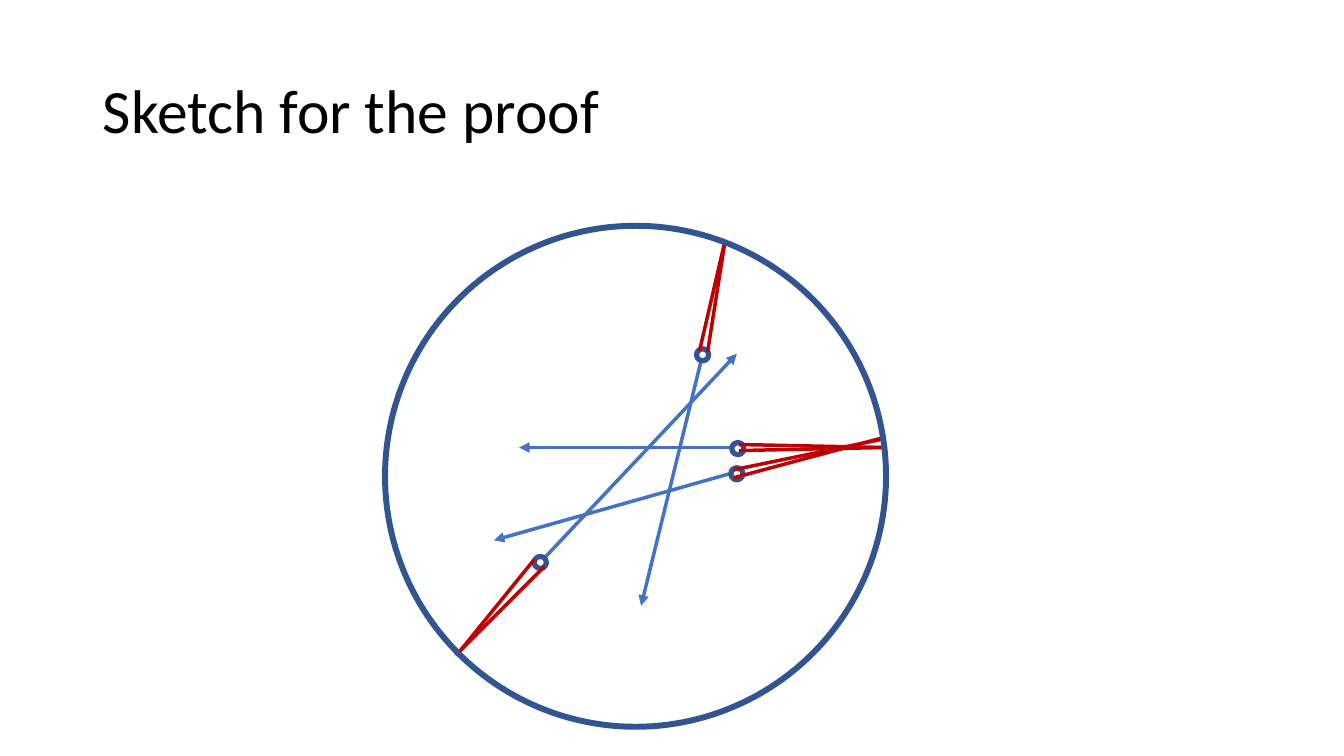
"""Build the proof sketch slide: sources in a disc, with rays and thin cones."""
from lxml.etree import SubElement
from pptx import Presentation
from pptx.dml.color import RGBColor
from pptx.enum.shapes import MSO_CONNECTOR as Link, MSO_SHAPE as Shape
from pptx.enum.text import MSO_ANCHOR as Anchor, MSO_AUTO_SIZE as Fit, PP_ALIGN as Align
from pptx.oxml.ns import qn
from pptx.util import Inches, Pt

COLORS = {"ray": "4472C4", "rim": "325491", "cone": "C00000", "dot": "FFFFFF", "text": "000000"}
TITLE = "Sketch for the proof"
FONT = "Calibri"

CELL = Inches(0.1)
COLUMNS, ROWS = 133.33, 75
TITLE_BOX = (9.2, 4, 115, 14.5)
DISC = {"center": (63.05, 47.25), "size": 49.7}
DOT_SIZE = 1.2
SOURCES = [
    {"dot": (73.2, 44.5), "ray": ((73.4, 44.4), (51.5, 44.4)),
     "cone": [((73.3, 44.1), (87.9, 44.4)), ((73.3, 44.7), (87.7, 44.4))]},
    {"dot": (69.7, 35.2), "ray": ((69.7, 35.2), (63.6, 60.1)),
     "cone": [((71.9, 24), (69.4, 34.8)), ((71.9, 24.1), (70.2, 34.9))]},
    {"dot": (73.1, 47), "ray": ((73.1, 46.8), (49, 53.6)),
     "cone": [((72.8, 47.4), (87.7, 43.4)), ((72.8, 46.6), (87.4, 43.6))]},
    {"dot": (53.6, 55.8), "ray": ((53.4, 56), (73.1, 35.1)),
     "cone": [((45.2, 65), (54, 56.2)), ((45.3, 65), (53, 55.5))]},
]


def cells(*values):
    return [round(value * CELL) for value in values]


def paint_line(line, color, width):
    line.color.rgb = RGBColor.from_string(COLORS[color])
    line.width = Pt(width)


def add_line(page, start, end, color, arrow=False):
    link = page.shapes.add_connector(Link.STRAIGHT, *cells(*start, *end))
    paint_line(link.line, color, 2.5)
    if arrow:
        SubElement(link.line._get_or_add_ln(), qn("a:tailEnd"), type="triangle")
    SubElement(link._element.spPr, qn("a:effectLst"))


def add_circle(page, center, size, width, fill=None):
    left, top = (middle - size / 2 for middle in center)
    circle = page.shapes.add_shape(Shape.OVAL, *cells(left, top, size, size))
    circle.shadow.inherit = False
    paint_line(circle.line, "rim", width)
    if fill:
        circle.fill.solid()
        circle.fill.fore_color.rgb = RGBColor.from_string(COLORS[fill])
    else:
        circle.fill.background()


def write_title(page):
    title = page.shapes.title
    title.left, title.top, title.width, title.height = cells(*TITLE_BOX)
    frame = title.text_frame
    frame.word_wrap = True
    frame.auto_size = Fit.NONE
    frame.vertical_anchor = Anchor.MIDDLE
    para = frame.paragraphs[0]
    para.alignment = Align.LEFT
    para.line_spacing = 0.9
    span = para.add_run()
    span.text = TITLE
    span.font.name = FONT
    span.font.size = Pt(44)
    span.font.color.rgb = RGBColor.from_string(COLORS["text"])


def main():
    deck = Presentation()
    deck.slide_width, deck.slide_height = cells(COLUMNS, ROWS)
    page = deck.slides.add_slide(deck.slide_layouts[5])
    write_title(page)
    for source in SOURCES:
        add_line(page, *source["ray"], "ray", arrow=True)
    for source in SOURCES:
        add_circle(page, source["dot"], DOT_SIZE, 3.75, "dot")
        for start, end in source["cone"]:
            add_line(page, start, end, "cone")
    add_circle(page, DISC["center"], DISC["size"], 4.25)
    deck.save("out.pptx")


if __name__ == "__main__":
    main()
